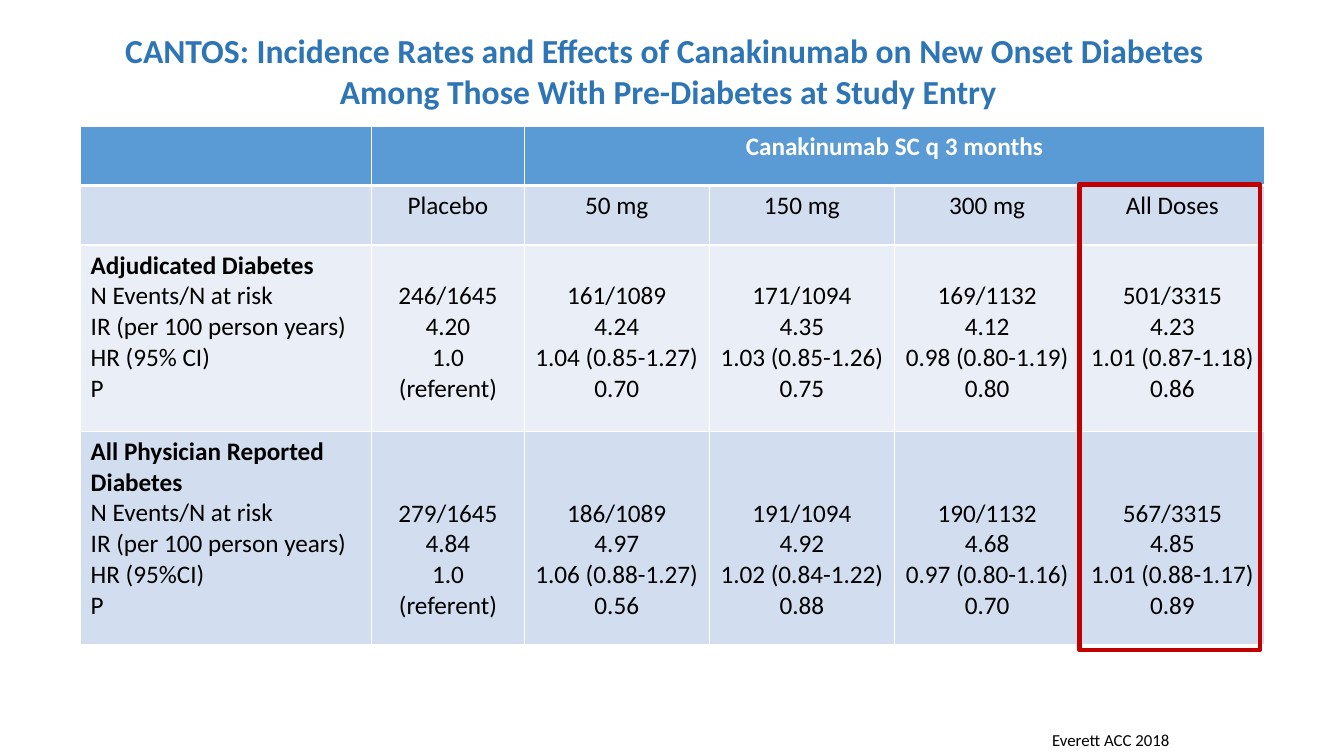
from pptx import Presentation
from pptx.dml.color import RGBColor
from pptx.enum.shapes import MSO_SHAPE as Shape
from pptx.enum.text import MSO_AUTO_SIZE as AutoSize, PP_ALIGN as Align
from pptx.oxml.ns import qn
from pptx.util import Pt
from lxml.etree import SubElement

FONT = "Calibri"
COLORS = {
    "title": "2E75B6", "header": "5B9BD5", "band": "D2DEEF", "light": "EAEFF7",
    "white": "FFFFFF", "black": "000000", "highlight": "C00000",
}
LINE_HEIGHT = 22
COL_WIDTHS = [208, 108.8] + [132.3] * 4
ROW_HEIGHTS = [42.5, 42.5, 133.2, 152.6]
GROUPS = ["Placebo", "50 mg", "150 mg", "300 mg", "All Doses"]

# Each outcome: labels, lines taken by its heading, one list of values per group
OUTCOMES = [
    (["Adjudicated Diabetes", "N Events/N at risk", "IR (per 100 person years)",
      "HR (95% CI)", "P"], 1, [
        ["246/1645", "4.20", "1.0", "(referent)"],
        ["161/1089", "4.24", "1.04 (0.85-1.27)", "0.70"],
        ["171/1094", "4.35", "1.03 (0.85-1.26)", "0.75"],
        ["169/1132", "4.12", "0.98 (0.80-1.19)", "0.80"],
        ["501/3315", "4.23", "1.01 (0.87-1.18)", "0.86"]]),
    (["All Physician Reported Diabetes", "N Events/N at risk",
      "IR (per 100 person years)", "HR (95%CI)", "P"], 2, [
        ["279/1645", "4.84", "1.0", "(referent)"],
        ["186/1089", "4.97", "1.06 (0.88-1.27)", "0.56"],
        ["191/1094", "4.92", "1.02 (0.84-1.22)", "0.88"],
        ["190/1132", "4.68", "0.97 (0.80-1.16)", "0.70"],
        ["567/3315", "4.85", "1.01 (0.88-1.17)", "0.89"]]),
]


def rgb(name):
    return RGBColor.from_string(COLORS[name])


def write(tf, lines, size=18, color="black", bold=False, align=Align.CENTER):
    tf.text = "\n".join(lines)
    for p in tf.paragraphs:
        p.alignment = align
        for r in p.runs:
            r.font.name = FONT
            r.font.size = Pt(size)
            r.font.bold = bold
            r.font.color.rgb = rgb(color)


def add_text(slide, box, lines, wrap=True, **style):
    tf = slide.shapes.add_textbox(*map(Pt, box)).text_frame
    tf.word_wrap = wrap
    tf.auto_size = AutoSize.SHAPE_TO_FIT_TEXT
    write(tf, lines, **style)


def style_cell(cell, fill, top=1, bottom=1):
    """Draw white borders of the given widths and fill the cell."""
    tc_pr = cell._tc.get_or_add_tcPr()
    for side, width in zip("LRTB", (1, 1, top, bottom)):
        ln = SubElement(tc_pr, qn(f"a:ln{side}"), w=str(Pt(width)))
        solid = SubElement(ln, qn("a:solidFill"))
        SubElement(solid, qn("a:srgbClr"), val=COLORS["white"])
    cell.fill.solid()
    cell.fill.fore_color.rgb = rgb(fill)


def add_results_table(slide, left, top):
    table = slide.shapes.add_table(
        len(ROW_HEIGHTS), len(COL_WIDTHS), Pt(left), Pt(top),
        Pt(sum(COL_WIDTHS)), Pt(sum(ROW_HEIGHTS))).table
    for col, width in zip(table.columns, COL_WIDTHS):
        col.width = Pt(width)
    for row, height in zip(table.rows, ROW_HEIGHTS):
        row.height = Pt(height)

    fills = ["header", "band", "light", "band"]
    for i, (row, fill) in enumerate(zip(table.rows, fills)):
        for cell in row.cells:
            style_cell(cell, fill, top=3 if i == 1 else 1, bottom=3 if i == 0 else 1)

    table.cell(0, 2).merge(table.cell(0, 5))
    write(table.cell(0, 2).text_frame, ["Canakinumab SC q 3 months"],
          color="white", bold=True)
    for col, group in enumerate(GROUPS, 1):
        write(table.cell(1, col).text_frame, [group])

    for row, (labels, heading_lines, values) in enumerate(OUTCOMES, 2):
        tf = table.cell(row, 0).text_frame
        write(tf, labels, align=Align.LEFT)
        tf.paragraphs[0].runs[0].font.bold = True
        for col, lines in enumerate(values, 1):
            cell = table.cell(row, col)
            cell.margin_top = Pt(3.6 + heading_lines * LINE_HEIGHT)
            write(cell.text_frame, lines)


def add_highlight(slide, box):
    sp = slide.shapes.add_shape(Shape.RECTANGLE, *map(Pt, box))
    sp.shadow.inherit = False
    sp.fill.background()
    sp.line.color.rgb = rgb("highlight")
    sp.line.width = Pt(3)


def main():
    prs = Presentation()
    prs.slide_width, prs.slide_height = Pt(960), Pt(540)
    slide = prs.slides.add_slide(prs.slide_layouts[6])
    add_results_table(slide, 57.6, 90)
    add_text(slide, (21.6, 18, 911.5, 65.5), [
        "CANTOS: Incidence Rates and Effects of Canakinumab on New Onset Diabetes ",
        "Among Those With Pre-Diabetes at Study Entry",
    ], size=24, color="title", bold=True)
    add_text(slide, (744.5, 517.7, 99.4, 21.6), ["Everett ACC 2018"],
             wrap=False, size=12, align=Align.LEFT)
    add_highlight(slide, (771.1, 131.8, 128.9, 332.6))
    prs.save("out.pptx")


if __name__ == "__main__":
    main()
